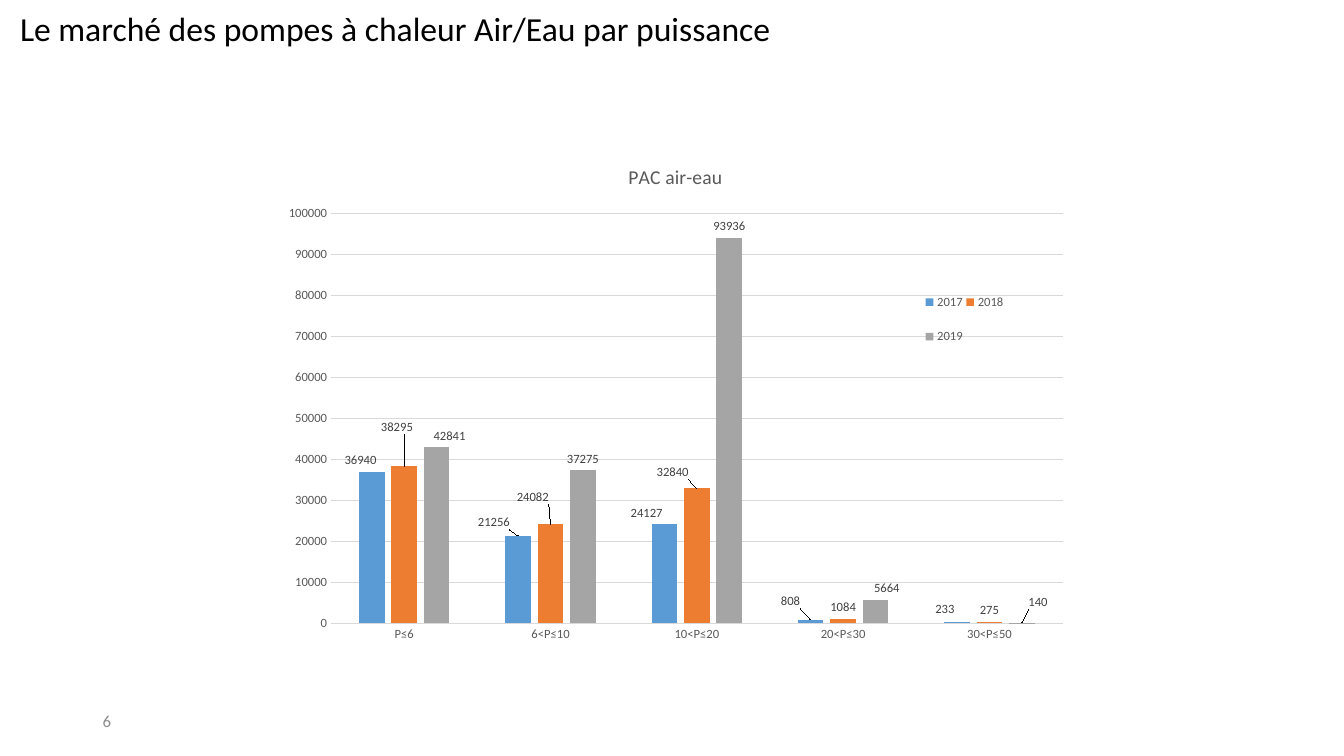
from lxml.etree import SubElement
from pptx import Presentation
from pptx.chart.data import CategoryChartData
from pptx.dml.color import RGBColor
from pptx.enum.chart import XL_CHART_TYPE, XL_LABEL_POSITION, XL_LEGEND_POSITION, XL_TICK_MARK
from pptx.enum.text import MSO_ANCHOR
from pptx.oxml.ns import qn
from pptx.util import Inches, Pt

COLORS = {
    "title": "000000", "number": "8C8C8C", "axis": "595959", "label": "404040",
    "grid": "D9D9D9", "2017": "5B9BD5", "2018": "ED7D31", "2019": "A5A5A5",
}
POWER_CLASSES = ["P≤6", "6<P≤10", "10<P≤20", "20<P≤30", "30<P≤50"]
SALES = {
    "2017": [36940, 21256, 24127, 808, 233],
    "2018": [38295, 24082, 32840, 1084, 275],
    "2019": [42841, 37275, 93936, 5664, 140],
}
# Label shifts by point, as percentages of the chart's width and height
LABEL_SHIFTS = {
    "2017": {0: (-1.4, 0), 1: (-3, -0.4), 2: (-2.2, 0), 3: (-2.5, -1.4), 4: (-1.5, -0.4)},
    "2018": {0: (-0.9, -5.5), 1: (-2.2, -3.1), 2: (-3, -1)},
    "2019": {0: (1.6, 0), 3: (1.4, 0), 4: (2, -1.8)},
}


def color(name):
    return RGBColor.from_string(COLORS[name])


def set_layout(parent, index, values):
    """Give a chart part a manual layout at its place among the children."""
    for old in parent.findall(qn("c:layout")):
        parent.remove(old)
    layout = SubElement(parent, qn("c:layout"))
    parent.insert(index, layout)
    manual = SubElement(layout, qn("c:manualLayout"))
    for tag, value in values.items():
        SubElement(manual, qn(f"c:{tag}")).set("val", str(value))


class SlideBuilder:
    font_name = "Calibri"

    def __init__(self, page):
        self.page = page

    def style_font(self, font, size, color_name):
        values = {"name": self.font_name, "size": Pt(size), "bold": False}
        for name, value in values.items():
            setattr(font, name, value)
        font.color.rgb = color(color_name)

    def text(self, words, area, size, color_name, anchor=MSO_ANCHOR.TOP):
        box = self.page.shapes.add_textbox(*map(Inches, area))
        frame = box.text_frame
        frame.word_wrap = True
        frame.vertical_anchor = anchor
        span = frame.paragraphs[0].add_run()
        span.text = words
        self.style_font(span.font, size, color_name)

    def column_chart(self, title, categories, data, area):
        chart_data = CategoryChartData()
        chart_data.categories = categories
        for name, values in data.items():
            chart_data.add_series(name, values)
        chart = self.page.shapes.add_chart(
            XL_CHART_TYPE.COLUMN_CLUSTERED, *map(Inches, area), chart_data).chart
        self.style_font(chart.font, 10, "title")

        # Title
        chart.has_title = True
        para = chart.chart_title.text_frame.paragraphs[0]
        span = para.add_run()
        span.text = title
        self.style_font(span.font, 14, "axis")

        # Columns
        plot = chart.plots[0]
        for name, value in {"gap_width": 219, "overlap": -27, "vary_by_categories": False}.items():
            setattr(plot, name, value)
        for series in plot.series:
            series.format.fill.solid()
            series.format.fill.fore_color.rgb = color(series.name)
            self.value_labels(series)
        self.axes(chart)
        self.legend(chart)
        plot_area = chart.element.find(".//" + qn("c:plotArea"))
        set_layout(plot_area, 0, {
            "layoutTarget": "inner", "xMode": "edge", "yMode": "edge",
            "x": 0.073, "y": 0.136, "w": 0.907, "h": 0.807})

    def value_labels(self, series):
        labels = series.data_labels
        labels.show_value = True
        labels.position = XL_LABEL_POSITION.OUTSIDE_END
        self.style_font(labels.font, 9, "label")
        shifts = LABEL_SHIFTS[series.name]
        for index in shifts:
            label = series.points[index].data_label
            self.style_font(label.font, 9, "label")
            label.position = XL_LABEL_POSITION.OUTSIDE_END
        for element in series.data_labels._element.findall(qn("c:dLbl")):
            x, y = shifts[int(element.find(qn("c:idx")).get("val"))]
            set_layout(element, 1, {"x": x / 100, "y": y / 100})

    def axes(self, chart):
        category_axis, value_axis = chart.category_axis, chart.value_axis
        for axis in (category_axis, value_axis):
            axis.major_tick_mark = axis.minor_tick_mark = XL_TICK_MARK.NONE
            self.style_font(axis.tick_labels.font, 9, "axis")
        scale = {"minimum_scale": 0, "maximum_scale": 100000, "major_unit": 10000,
                 "has_major_gridlines": True}
        for name, value in scale.items():
            setattr(value_axis, name, value)
        value_axis.format.line.fill.background()
        for line in (category_axis.format.line, value_axis.major_gridlines.format.line):
            line.color.rgb = color("grid")
            line.width = Pt(0.75)

    def legend(self, chart):
        chart.has_legend = True
        legend = chart.legend
        legend.position = XL_LEGEND_POSITION.CORNER
        legend.include_in_layout = True
        self.style_font(legend.font, 9, "axis")
        set_layout(chart.element.find(".//" + qn("c:legend")), 1, {
            "xMode": "edge", "yMode": "edge", "x": 0.806, "y": 0.258, "w": 0.105, "h": 0.174})


def main():
    deck = Presentation()
    deck.slide_width, deck.slide_height = Inches(13.33), Inches(7.5)
    builder = SlideBuilder(deck.slides.add_slide(deck.slide_layouts[6]))

    # Page number and heading
    builder.text("6", (0.92, 6.95, 3, 0.4), 12, "number", MSO_ANCHOR.MIDDLE)
    builder.text("Le marché des pompes à chaleur Air/Eau par puissance",
                 (0.1, 0.03, 8.55, 0.5), 24, "title")

    # Sales by power class
    builder.column_chart("PAC air-eau", POWER_CLASSES, SALES, (2.7, 1.43, 8, 5.04))
    deck.save("out.pptx")


if __name__ == "__main__":
    main()
